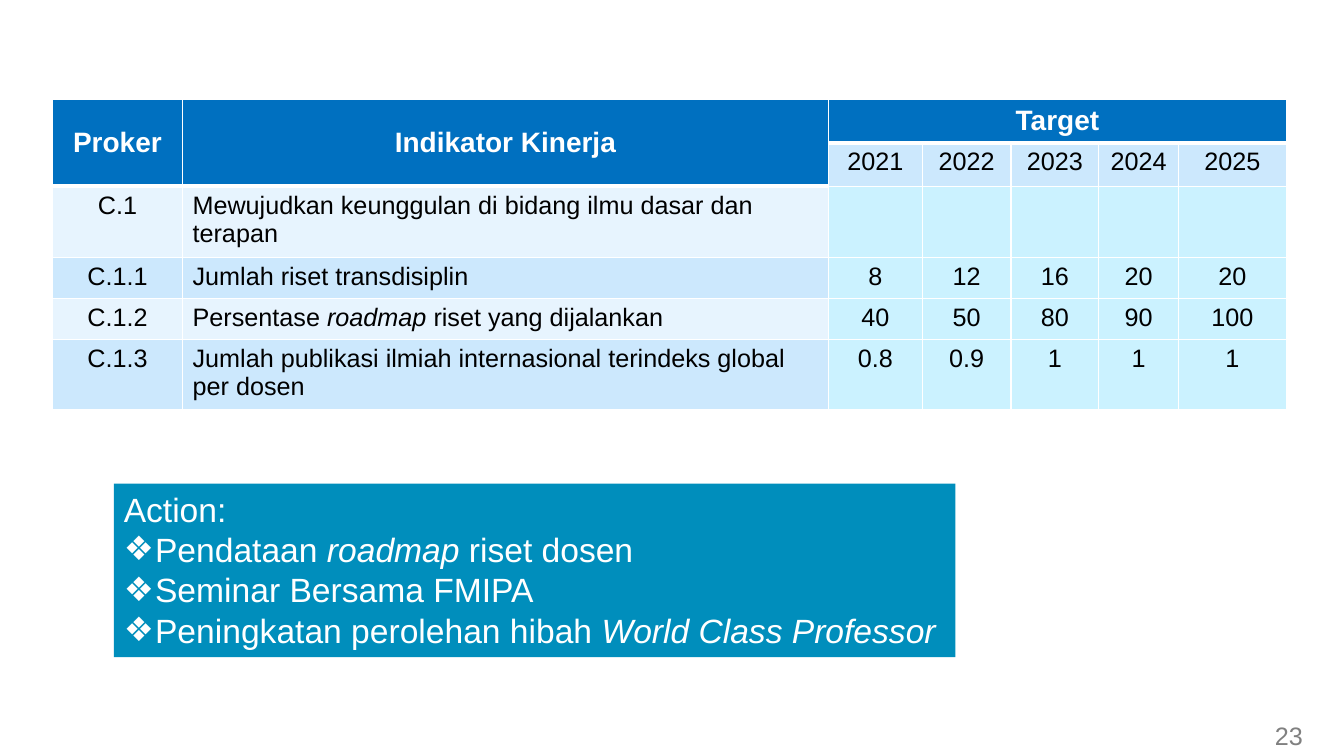
from lxml.etree import SubElement
from pptx import Presentation
from pptx.dml.color import RGBColor
from pptx.enum.shapes import MSO_SHAPE
from pptx.enum.text import MSO_ANCHOR, MSO_AUTO_SIZE, PP_ALIGN
from pptx.oxml.ns import qn
from pptx.util import Cm, Pt

COLORS = {
    "header": "0070C0",
    "odd": "CCE8FD",
    "even": "E7F4FE",
    "target": "CBF2FF",
    "action": "008EBC",
    "white": "FFFFFF",
    "black": "000000",
    "gray": "808080",
}
FONT = "Arial"
COLUMN_WIDTHS = [3.28, 16.28, 2.36, 2.24, 2.21, 2.01, 2.72]
ROW_HEIGHTS = [1.09, 1.09, 1.8, 1.03, 1.03, 1.77]
ROWS = [
    ["Proker", "Indikator Kinerja", "Target", "", "", "", ""],
    ["", "", "2021", "2022", "2023", "2024", "2025"],
    ["C.1", "Mewujudkan keunggulan di bidang ilmu dasar dan terapan", "", "", "", "", ""],
    ["C.1.1", "Jumlah riset transdisiplin", "8", "12", "16", "20", "20"],
    ["C.1.2", "Persentase *roadmap* riset yang dijalankan", "40", "50", "80", "90", "100"],
    ["C.1.3", "Jumlah publikasi ilmiah internasional terindeks global per dosen",
     "0.8", "0.9", "1", "1", "1"],
]
ACTIONS = [
    "Pendataan *roadmap* riset dosen",
    "Seminar Bersama FMIPA",
    "Peningkatan perolehan hibah *World Class Professor*",
]


def rgb(name):
    return RGBColor.from_string(COLORS[name])


def write(paragraph, marked, size, color, bold=False, align=PP_ALIGN.LEFT):
    paragraph.alignment = align
    paragraph.font.size = Pt(size)
    for index, part in enumerate(marked.split("*")):
        if not part:
            continue
        run = paragraph.add_run()
        run.text = part
        run.font.name = FONT
        run.font.size = Pt(size)
        run.font.bold = bold
        run.font.italic = index % 2 == 1
        run.font.color.rgb = rgb(color)


def add_bullet(paragraph, char):
    properties = paragraph._p.get_or_add_pPr()
    properties.set("marL", str(Cm(0.79)))
    properties.set("indent", str(-Cm(0.79)))
    SubElement(properties, qn("a:buFont"), typeface=FONT)
    SubElement(properties, qn("a:buChar"), char=char)


def add_borders(cell, top, bottom):
    properties = cell._tc.get_or_add_tcPr()
    for side, width in (("L", 1), ("R", 1), ("T", top), ("B", bottom)):
        line = SubElement(properties, qn(f"a:ln{side}"), w=str(Pt(width)))
        fill = SubElement(line, qn("a:solidFill"))
        SubElement(fill, qn("a:srgbClr"), val=COLORS["white"])


def is_header(row, column):
    return row == 0 or (row == 1 and column < 2)


def cell_color(row, column):
    if is_header(row, column):
        return "header"
    if row > 1 and column > 1:
        return "target"
    return "odd" if row % 2 else "even"


def add_targets(slide):
    table = slide.shapes.add_table(
        len(ROWS), len(COLUMN_WIDTHS), Cm(1.32), Cm(2.51),
        Cm(sum(COLUMN_WIDTHS)), Cm(sum(ROW_HEIGHTS))).table
    for column, width in zip(table.columns, COLUMN_WIDTHS):
        column.width = Cm(width)
    for row, height in zip(table.rows, ROW_HEIGHTS):
        row.height = Cm(height)
    for r, values in enumerate(ROWS):
        for c, value in enumerate(values):
            cell = table.cell(r, c)
            last_header_row = 1 if c < 2 else 0
            add_borders(cell, 3 if r == last_header_row + 1 else 1,
                        3 if r == last_header_row else 1)
            cell.fill.solid()
            cell.fill.fore_color.rgb = rgb(cell_color(r, c))
            header = is_header(r, c)
            cell.vertical_anchor = MSO_ANCHOR.MIDDLE if header and c < 2 else MSO_ANCHOR.TOP
            align = PP_ALIGN.LEFT if c == 1 and not header else PP_ALIGN.CENTER
            write(cell.text_frame.paragraphs[0], value, 20 if header else 18,
                  "white" if header else "black", header, align)
    for c in range(2):
        table.cell(0, c).merge(table.cell(1, c))
    table.cell(0, 2).merge(table.cell(0, 6))


def add_actions(slide):
    box = slide.shapes.add_shape(
        MSO_SHAPE.RECTANGLE, Cm(2.87), Cm(12.19), Cm(21.21), Cm(4.37))
    box.shadow.inherit = False
    box.fill.solid()
    box.fill.fore_color.rgb = rgb("action")
    box.line.fill.background()
    frame = box.text_frame
    frame.word_wrap = False
    frame.auto_size = MSO_AUTO_SIZE.SHAPE_TO_FIT_TEXT
    frame.vertical_anchor = MSO_ANCHOR.TOP
    write(frame.paragraphs[0], "Action:", 24, "white")
    for action in ACTIONS:
        paragraph = frame.add_paragraph()
        add_bullet(paragraph, "❖")
        write(paragraph, action, 24, "white")


def add_page_number(slide, number):
    frame = slide.shapes.add_textbox(Cm(31.88), Cm(18.03), Cm(1.4), Cm(1.02)).text_frame
    frame.word_wrap = True
    frame.auto_size = MSO_AUTO_SIZE.SHAPE_TO_FIT_TEXT
    write(frame.paragraphs[0], number, 18, "gray")


def main():
    deck = Presentation()
    deck.slide_width = Cm(33.87)
    deck.slide_height = Cm(19.05)
    slide = deck.slides.add_slide(deck.slide_layouts[6])
    add_targets(slide)
    add_actions(slide)
    add_page_number(slide, "23")
    deck.save("out.pptx")


if __name__ == "__main__":
    main()
